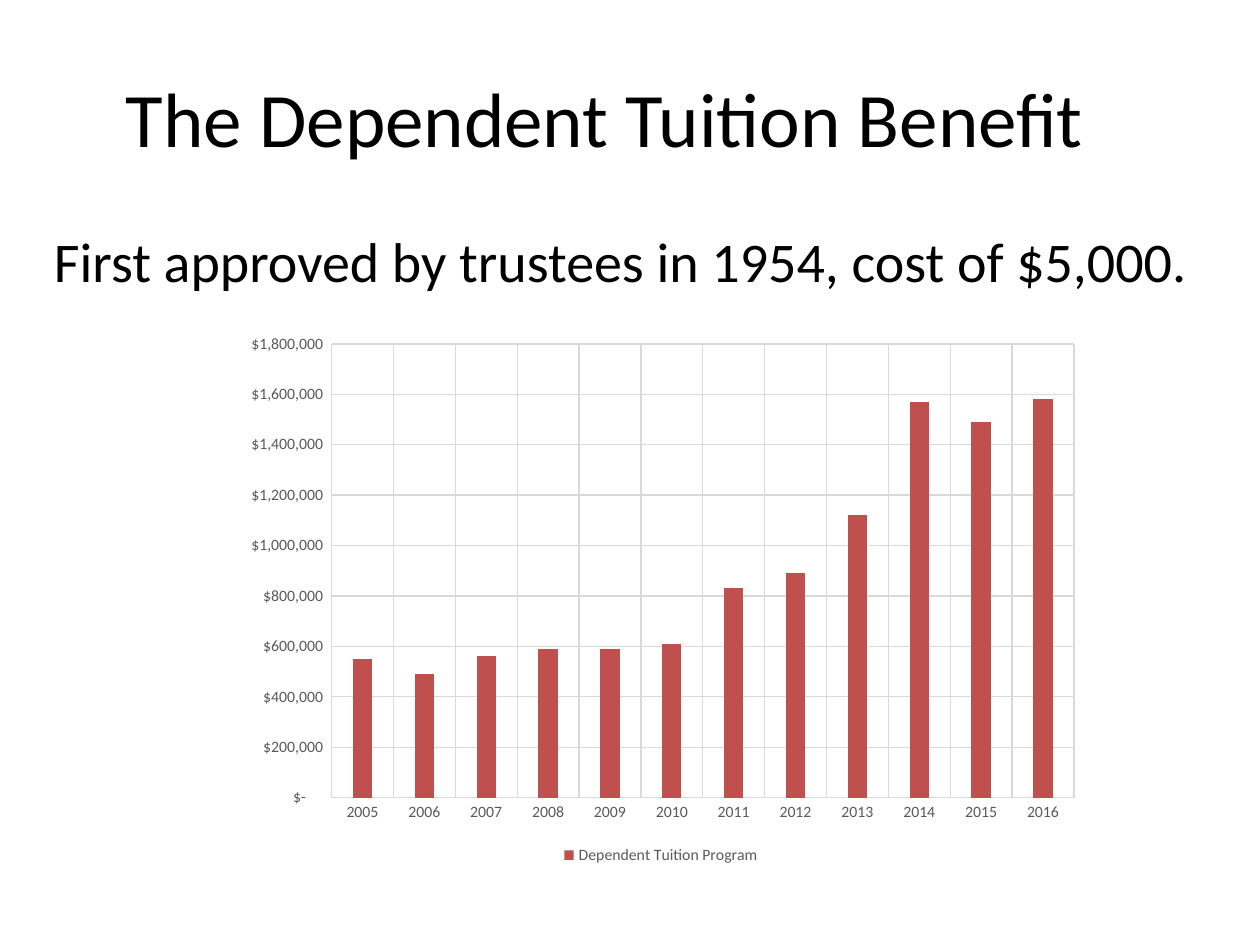
"""Build the dependent tuition benefit slide."""
from dataclasses import dataclass

from pptx import Presentation
from pptx.chart.axis import _BaseAxis
from pptx.chart.data import CategoryChartData
from pptx.dml.color import RGBColor
from pptx.enum.chart import XL_CHART_TYPE, XL_LEGEND_POSITION, XL_TICK_MARK
from pptx.enum.text import MSO_ANCHOR, PP_ALIGN
from pptx.slide import Slide
from pptx.text.text import Font
from pptx.util import Inches, Pt

COLUMNS = XL_CHART_TYPE.COLUMN_CLUSTERED
BOTTOM = XL_LEGEND_POSITION.BOTTOM
NO_TICK = XL_TICK_MARK.NONE
MIDDLE, TOP = MSO_ANCHOR.MIDDLE, MSO_ANCHOR.TOP
CENTER, LEFT = PP_ALIGN.CENTER, PP_ALIGN.LEFT

FONT = "Calibri"
COLORS = {"text": "000000", "label": "595959", "grid": "D9D9D9", "bar": "C0504D"}
DOLLARS = '_("$"* #,##0_);_("$"* \\(#,##0\\);_("$"* "-"??_);_(@_)'
YEARS = range(2005, 2017)
COSTS = (550000, 490000, 560000, 590000, 590000, 610000,
         830000, 890000, 1120000, 1570000, 1490000, 1580000)


@dataclass(frozen=True)
class Statement:
    text: str
    box: tuple[float, float, float, float]
    size: int
    anchor: MSO_ANCHOR
    align: PP_ALIGN


STATEMENTS = (
    Statement("The Dependent Tuition Benefit\t", (0.5, 0.3, 9, 1.25), 44, MIDDLE, CENTER),
    Statement("First approved by trustees in 1954, cost of $5,000.",
              (0.33, 1.75, 9.33, 4.95), 32, TOP, LEFT),
)


def color(name: str) -> RGBColor:
    return RGBColor.from_string(COLORS[name])


def style_font(font: Font, size: int, color_name: str) -> None:
    font.name = FONT
    font.size = Pt(size)
    font.color.rgb = color(color_name)


def add_statement(slide: Slide, statement: Statement) -> None:
    frame = slide.shapes.add_textbox(*map(Inches, statement.box)).text_frame
    frame.word_wrap = True
    frame.vertical_anchor = statement.anchor
    frame.text = statement.text
    paragraph = frame.paragraphs[0]
    paragraph.alignment = statement.align
    for run in paragraph.runs:
        style_font(run.font, statement.size, "text")


def style_axis(axis: _BaseAxis, number_format: str) -> None:
    axis.major_tick_mark = axis.minor_tick_mark = NO_TICK
    axis.has_major_gridlines = True
    grid = axis.major_gridlines.format.line
    grid.color.rgb = color("grid")
    grid.width = Pt(0.75)
    axis.tick_labels.number_format = number_format
    axis.tick_labels.number_format_is_linked = False
    style_font(axis.tick_labels.font, 9, "label")


def add_cost_chart(slide: Slide) -> None:
    costs = CategoryChartData(number_format=DOLLARS)
    costs.categories = YEARS
    costs.add_series("Dependent Tuition Program", COSTS)
    box = map(Inches, (1.83, 2.57, 6.83, 4.33))
    chart = slide.shapes.add_chart(COLUMNS, *box, costs).chart
    style_font(chart.font, 10, "text")
    chart.has_title = False
    chart.has_legend = True
    chart.legend.position = BOTTOM
    chart.legend.include_in_layout = False
    style_font(chart.legend.font, 9, "label")

    style_axis(chart.category_axis, "0")
    chart.category_axis.format.line.color.rgb = color("grid")
    chart.category_axis.format.line.width = Pt(0.75)
    style_axis(chart.value_axis, DOLLARS)
    chart.value_axis.format.line.fill.background()

    plot = chart.plots[0]
    plot.vary_by_categories = False
    plot.gap_width = 219
    plot.overlap = -27
    bars = plot.series[0].format.fill
    bars.solid()
    bars.fore_color.rgb = color("bar")


def main() -> None:
    presentation = Presentation()
    presentation.slide_width = Inches(10)
    presentation.slide_height = Inches(7.5)
    slide = presentation.slides.add_slide(presentation.slide_layouts[6])
    for statement in STATEMENTS:
        add_statement(slide, statement)
    add_cost_chart(slide)
    presentation.save("out.pptx")


if __name__ == "__main__":
    main()
